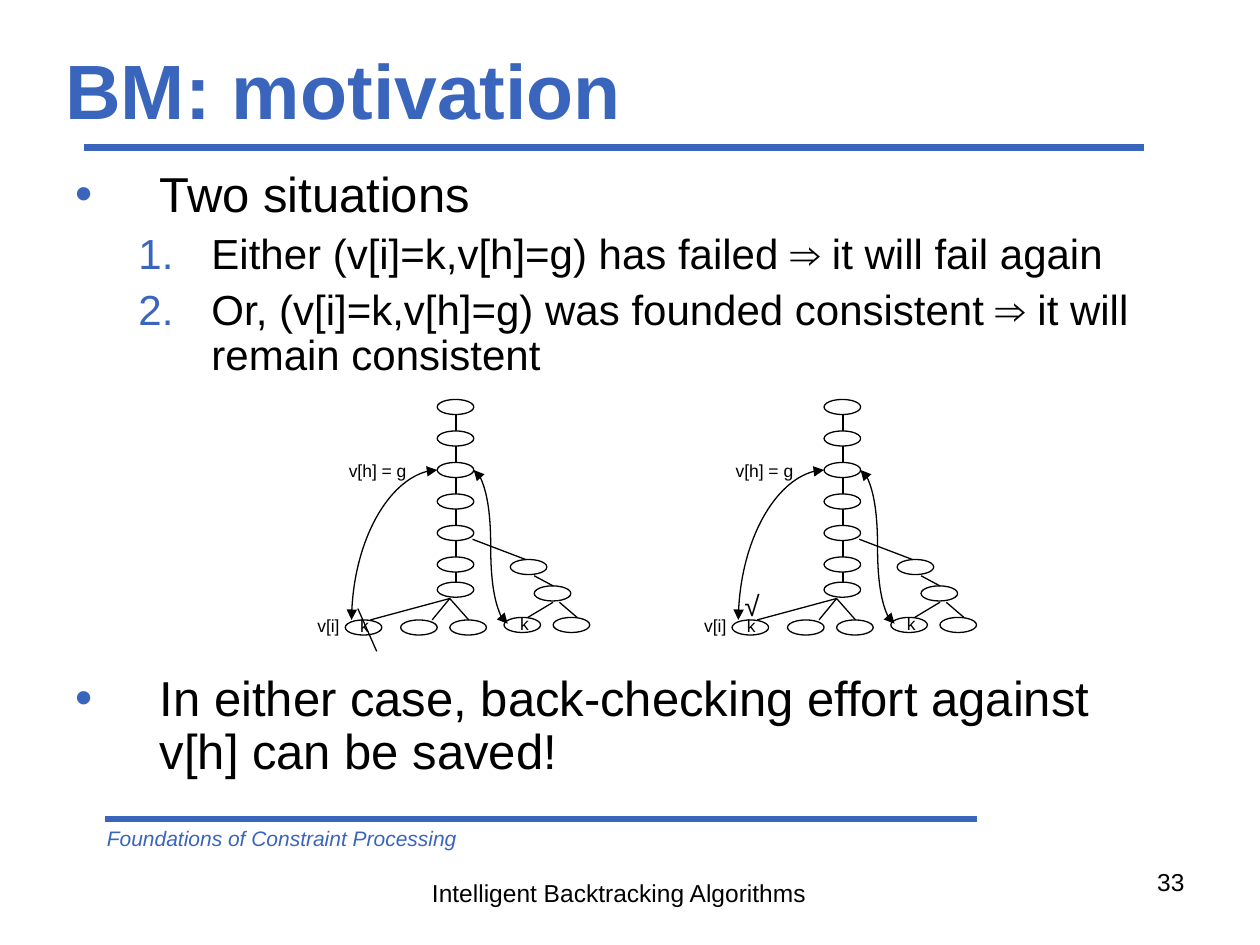
from dataclasses import dataclass
from itertools import pairwise

from lxml import etree
from pptx import Presentation
from pptx.dml.color import RGBColor
from pptx.enum.shapes import MSO_CONNECTOR, MSO_SHAPE
from pptx.enum.text import MSO_ANCHOR, MSO_AUTO_SIZE, PP_ALIGN
from pptx.oxml.ns import qn
from pptx.util import Pt

PX = 9144
STRAIGHT = MSO_CONNECTOR.STRAIGHT
CURVE = MSO_CONNECTOR.CURVE
OVAL = MSO_SHAPE.OVAL
TOP = MSO_ANCHOR.TOP
MIDDLE = MSO_ANCHOR.MIDDLE
FIT_TEXT = MSO_AUTO_SIZE.SHAPE_TO_FIT_TEXT
FIXED = MSO_AUTO_SIZE.NONE
LEFT = PP_ALIGN.LEFT
RIGHT = PP_ALIGN.RIGHT

NODE_W, NODE_H = 29, 12
TREE_STEP = 307
BULLET = ("buChar", {"char": "•"})
NUMBER = ("buAutoNum", {"type": "arabicPeriod"})


@dataclass(frozen=True)
class Theme:
    font: str = "Arial"
    accent: RGBColor = RGBColor(0x3A, 0x65, 0xBC)
    ink: RGBColor = RGBColor(0, 0, 0)
    title: int = 44
    point: int = 28
    subpoint: int = 24
    check: int = 16
    footer: int = 14
    course: int = 12
    label: int = 10
    rule: float = 4
    stroke: float = 0.75


class Deck:
    def __init__(self, theme):
        self.theme = theme
        self.presentation = Presentation()
        self.presentation.slide_width = 1000 * PX
        self.presentation.slide_height = 750 * PX
        self.slide = self.presentation.slides.add_slide(self.presentation.slide_layouts[6])
        self.shapes = self.slide.shapes

    def start_group(self):
        self.shapes = self.slide.shapes.add_group_shape().shapes

    def end_group(self):
        self.shapes = self.slide.shapes

    def frame(self, left, top, width, height, **formats):
        box = self.shapes.add_textbox(left * PX, top * PX, width * PX, height * PX)
        settings = {"word_wrap": True, "auto_size": FIXED, "vertical_anchor": TOP}
        for attribute, value in (settings | formats).items():
            setattr(box.text_frame, attribute, value)
        return box.text_frame

    def add_words(self, paragraph, words, size, color=None, **formats):
        run = paragraph.add_run()
        run.text = words
        settings = {"name": self.theme.font, "size": Pt(size)}
        for attribute, value in (settings | formats).items():
            setattr(run.font, attribute, value)
        run.font.color.rgb = color or self.theme.ink

    def text(self, place, words, size, color=None, align=LEFT, frame=None, **formats):
        paragraph = self.frame(*place, **(frame or {})).paragraphs[0]
        paragraph.alignment = align
        self.add_words(paragraph, words, size, color, **formats)

    def label(self, place, words):
        self.text(place, words, self.theme.label,
                  frame={"word_wrap": False, "auto_size": FIT_TEXT})

    def outline(self, place, points):
        frame = self.frame(*place)
        for index, (words, level) in enumerate(points):
            paragraph = frame.add_paragraph() if index else frame.paragraphs[0]
            margin, hanging, size, (tag, marker) = (
                (108, 58, self.theme.subpoint, NUMBER) if level
                else (67, 67, self.theme.point, BULLET))
            settings = {"level": level, "line_spacing": 0.9,
                        "space_before": Pt(6 if index else 0)}
            for attribute, value in settings.items():
                setattr(paragraph, attribute, value)
            properties = paragraph._p.get_or_add_pPr()
            properties.set("marL", str(margin * PX))
            properties.set("indent", str(-hanging * PX))
            tint = etree.SubElement(properties, qn("a:buClr"))
            etree.SubElement(tint, qn("a:srgbClr"), val=str(self.theme.accent))
            etree.SubElement(properties, qn("a:buFont"), typeface=self.theme.font)
            etree.SubElement(properties, qn(f"a:{tag}"), marker)
            self.add_words(paragraph, words, size)

    def node(self, left, top):
        oval = self.shapes.add_shape(OVAL, left * PX, top * PX, NODE_W * PX, NODE_H * PX)
        oval.shadow.inherit = False
        oval.fill.background()
        oval.line.color.rgb = self.theme.ink
        oval.line.width = Pt(self.theme.stroke)

    def line(self, x1, y1, x2, y2, color=None, width=None, kind=STRAIGHT):
        link = self.shapes.add_connector(kind, x1 * PX, y1 * PX, x2 * PX, y2 * PX)
        link.line.color.rgb = color or self.theme.ink
        link.line.width = Pt(width or self.theme.stroke)
        etree.SubElement(link._element.spPr, qn("a:effectLst"))
        return link

    def rule(self, x1, x2, y):
        self.line(x1, y, x2, y, self.theme.accent, self.theme.rule)

    def double_arrow(self, *ends, geometry):
        properties = self.line(*ends, kind=CURVE)._element.spPr
        properties.find(qn("a:prstGeom")).set("prst", geometry)
        stroke = properties.find(qn("a:ln"))
        for end in ("headEnd", "tailEnd"):
            etree.SubElement(stroke, qn(f"a:{end}"), type="triangle")


def draw_search_tree(deck, dx, failed):
    deck.start_group()
    if not failed:
        deck.text((274 + dx, 462, 42, 37), "√", deck.theme.check)

    spine = [317 + 25 * depth for depth in range(6)] + [462]
    leaves = [(274, 492), (318, 492), (357, 492)]
    right_branch = [(405, 444), (424, 465), (400, 490), (439, 490)]
    for left, top in [(347, top) for top in spine] + leaves + right_branch:
        deck.node(left + dx, top)

    spine_links = [(362, upper + NODE_H, 362, lower) for upper, lower in pairwise(spine)]
    leaf_links = [(357, 475, x, 492) for x in (294, 343, 372)]
    right_links = [(375, 428, 417, 444), (424, 457, 439, 465),
                   (439, 478, 419, 490), (444, 478, 458, 490)]
    strike = [(284, 483, 299, 517)] if failed else []
    for x1, y1, x2, y2 in spine_links + leaf_links + right_links + strike:
        deck.line(x1 + dx, y1, x2 + dx, y2)

    deck.double_arrow(347 + dx, 373, 279 + dx, 492, geometry="curvedConnector2")
    deck.double_arrow(376 + dx, 373, 403 + dx, 495, geometry="curvedConnector3")
    for left, top, width, words in [(267, 360, 66, "v[h] = g"), (242, 483, 38, "v[i]"),
                                    (403, 482, 27, "k"), (276, 483, 27, "k")]:
        deck.label((left + dx, top, width, 27), words)
    deck.end_group()


def main():
    theme = Theme()
    deck = Deck(theme)
    deck.rule(67, 908, 117)
    deck.rule(83, 775, 650)
    deck.text((75, 650, 525, 30), "Foundations of Constraint Processing",
              theme.course, theme.accent, italic=True)
    deck.text((333, 692, 319, 34), "Intelligent Backtracking Algorithms", theme.footer)
    deck.text((717, 683, 233, 52), "33", theme.footer, align=RIGHT)
    deck.text((42, 33, 900, 75), "BM: motivation", theme.title, theme.accent,
              frame={"vertical_anchor": MIDDLE}, bold=True)
    deck.outline((50, 130, 875, 120), [
        ("Two situations", 0),
        ("Either (v[i]=k,v[h]=g) has failed ⇒ it will fail again", 1),
        ("Or, (v[i]=k,v[h]=g) was founded consistent ⇒ it will remain consistent", 1),
    ])
    for index, failed in enumerate((True, False)):
        draw_search_tree(deck, index * TREE_STEP, failed)
    deck.outline((50, 530, 875, 120), [
        ("In either case, back-checking effort against v[h] can be saved!", 0),
    ])
    deck.presentation.save("out.pptx")


if __name__ == "__main__":
    main()
